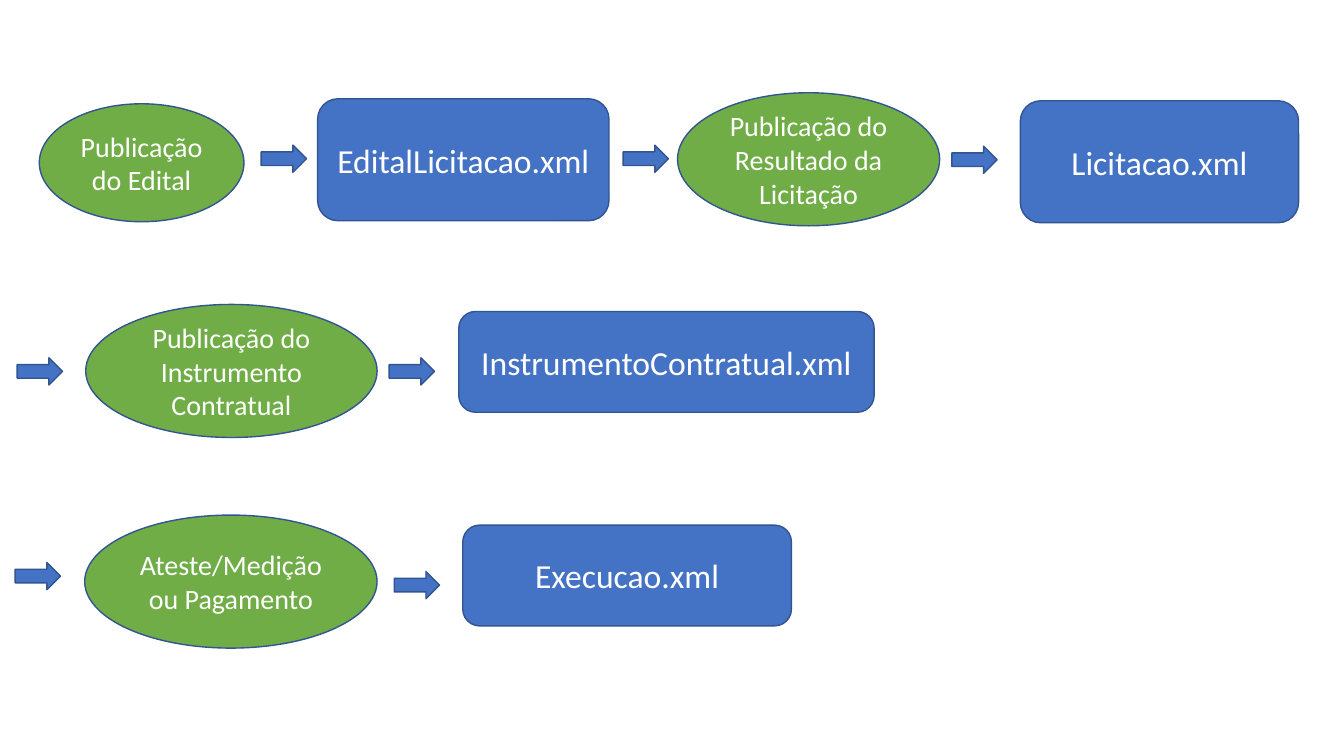
from dataclasses import dataclass

from pptx import Presentation
from pptx.dml.color import RGBColor
from pptx.enum.shapes import MSO_SHAPE as Preset
from pptx.enum.text import MSO_ANCHOR as Anchor, PP_ALIGN as Align
from pptx.shapes.autoshape import Shape
from pptx.slide import Slide
from pptx.util import Pt

EMU_PER_PX = 9144  # 100 px to the inch


@dataclass(frozen=True)
class Theme:
    event: RGBColor = RGBColor(0x70, 0xAD, 0x47)
    file: RGBColor = RGBColor(0x44, 0x72, 0xC4)
    outline: RGBColor = RGBColor(0x32, 0x54, 0x91)
    text: RGBColor = RGBColor(0xFF, 0xFF, 0xFF)
    font: str = "Calibri"
    event_size: int = 20
    file_size: int = 24
    outline_width: int = 1


@dataclass(frozen=True)
class Box:
    left: int
    top: int
    width: int
    height: int


@dataclass(frozen=True)
class Step:
    """A publication event and the XML file it leads to."""
    event: str
    event_box: Box
    file: str
    file_box: Box


@dataclass(frozen=True)
class Arrow:
    left: int
    top: int


THEME = Theme()
SLIDE_WIDTH, SLIDE_HEIGHT = 1333, 750
ARROW_WIDTH, ARROW_HEIGHT = 45, 27

STEPS = [
    Step("Publicação do Edital", Box(39, 103, 203, 117),
         "EditalLicitacao.xml", Box(315, 98, 289, 121)),
    Step("Publicação do Resultado da Licitação", Box(672, 92, 260, 132),
         "Licitacao.xml", Box(1012, 100, 276, 121)),
    Step("Publicação do Instrumento Contratual", Box(85, 302, 289, 132),
         "InstrumentoContratual.xml", Box(455, 309, 412, 100)),
    Step("Ateste/Medição ou Pagamento", Box(84, 511, 290, 132),
         "Execucao.xml", Box(459, 521, 326, 100)),
]

ARROWS = [
    Arrow(259, 144), Arrow(618, 144), Arrow(944, 145),
    Arrow(17, 355), Arrow(386, 355),
    Arrow(15, 558), Arrow(391, 567),
]


def px(length: int) -> int:
    return length * EMU_PER_PX


def draw_shape(slide: Slide, preset: Preset, box: Box, fill: RGBColor) -> Shape:
    shape = slide.shapes.add_shape(
        preset, px(box.left), px(box.top), px(box.width), px(box.height))
    shape.shadow.inherit = False
    shape.fill.solid()
    shape.fill.fore_color.rgb = fill
    shape.line.color.rgb = THEME.outline
    shape.line.width = Pt(THEME.outline_width)
    return shape


def write_label(shape: Shape, label: str, size: int) -> None:
    frame = shape.text_frame
    frame.text = label
    frame.word_wrap = True
    frame.vertical_anchor = Anchor.MIDDLE
    paragraph = frame.paragraphs[0]
    paragraph.alignment = Align.CENTER
    font = paragraph.runs[0].font
    font.name = THEME.font
    font.size = Pt(size)
    font.color.rgb = THEME.text


def draw_step(slide: Slide, step: Step) -> None:
    event = draw_shape(slide, Preset.OVAL, step.event_box, THEME.event)
    write_label(event, step.event, THEME.event_size)
    file = draw_shape(slide, Preset.ROUNDED_RECTANGLE, step.file_box, THEME.file)
    write_label(file, step.file, THEME.file_size)


def draw_arrow(slide: Slide, arrow: Arrow) -> None:
    box = Box(arrow.left, arrow.top, ARROW_WIDTH, ARROW_HEIGHT)
    draw_shape(slide, Preset.RIGHT_ARROW, box, THEME.file)


def main() -> None:
    deck = Presentation()
    deck.slide_width, deck.slide_height = px(SLIDE_WIDTH), px(SLIDE_HEIGHT)
    slide = deck.slides.add_slide(deck.slide_layouts.get_by_name("Blank"))

    # Events and the files they produce
    for step in STEPS:
        draw_step(slide, step)

    # Flow between them
    for arrow in ARROWS:
        draw_arrow(slide, arrow)

    deck.save("out.pptx")


if __name__ == "__main__":
    main()
